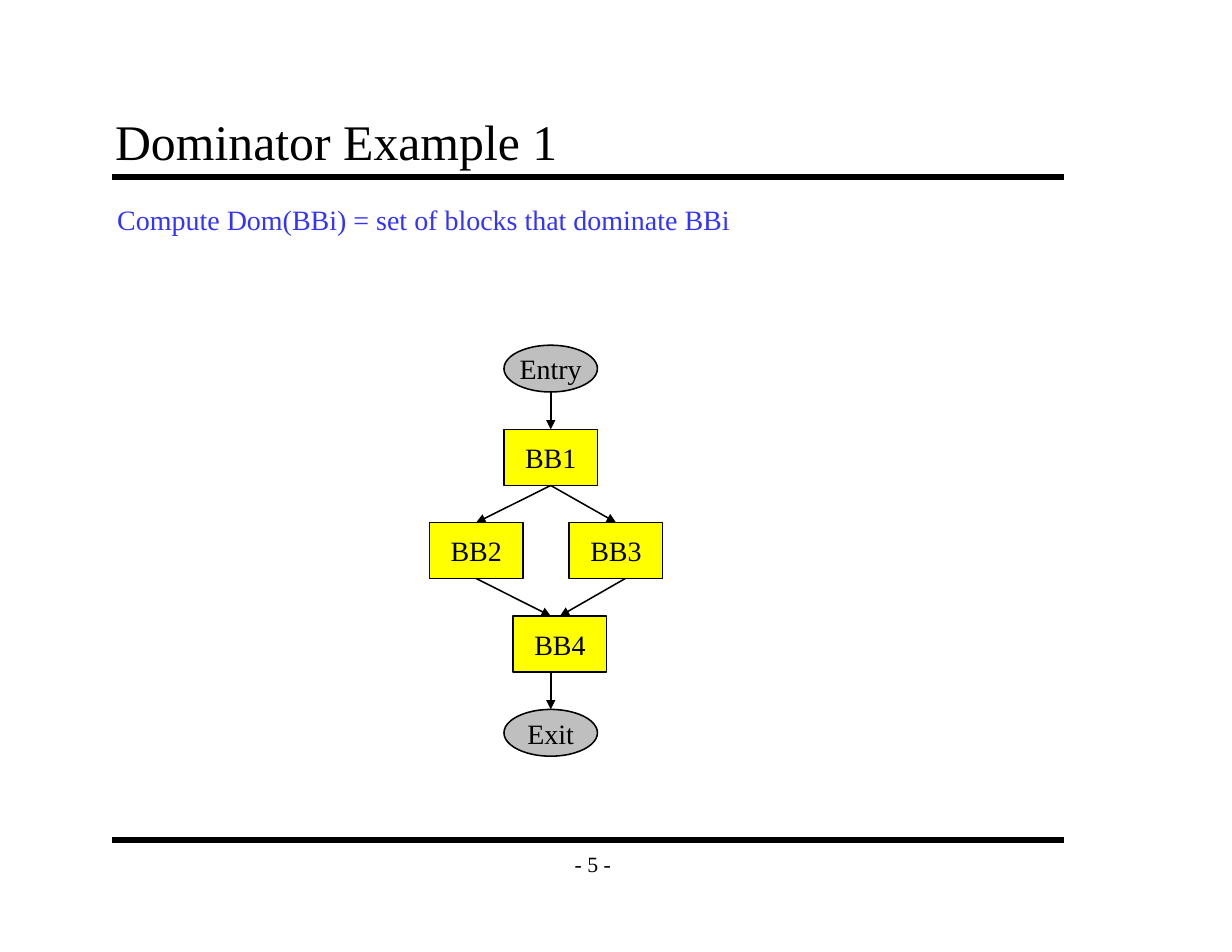
from lxml.etree import SubElement
from pptx import Presentation
from pptx.dml.color import RGBColor
from pptx.enum.shapes import MSO_CONNECTOR, MSO_SHAPE
from pptx.enum.text import MSO_ANCHOR, PP_ALIGN
from pptx.oxml.ns import qn
from pptx.util import Cm, Pt

FONT = "Times New Roman"
BLACK, YELLOW, GRAY, BLUE = "000000", "FFFF00", "BFBFBF", "3333FF"
NODE_WIDTH, BLOCK_HEIGHT, OVAL_HEIGHT = 2.12, 1.27, 1.06
TOP, BOTTOM = 0, 2
AXIS = 12.49


def color(hex_string):
    return RGBColor.from_string(hex_string)


def write(shape, text, size, ink=BLACK, align=PP_ALIGN.LEFT,
          anchor=MSO_ANCHOR.MIDDLE, wrap=False, insets=(0.25, 0.13)):
    frame = shape.text_frame
    frame.text = text
    frame.word_wrap = wrap
    frame.vertical_anchor = anchor
    frame.margin_left = frame.margin_right = Cm(insets[0])
    frame.margin_top = frame.margin_bottom = Cm(insets[1])
    paragraph = frame.paragraphs[0]
    paragraph.alignment = align
    font = paragraph.runs[0].font
    font.name, font.size = FONT, Pt(size)
    font.color.rgb = color(ink)


def add_label(slide, box, text, size, **style):
    label = slide.shapes.add_textbox(*map(Cm, box))
    write(label, text, size, **style)


def add_node(slide, text, kind, center, top, height, fill):
    node = slide.shapes.add_shape(kind, Cm(center - NODE_WIDTH / 2), Cm(top),
                                  Cm(NODE_WIDTH), Cm(height))
    node.shadow.inherit = False
    node.fill.solid()
    node.fill.fore_color.rgb = color(fill)
    node.line.color.rgb = color(BLACK)
    node.line.width = Pt(1)
    write(node, text, 18, align=PP_ALIGN.CENTER)
    return node


def add_block(slide, text, center, top):
    return add_node(slide, text, MSO_SHAPE.RECTANGLE, center, top,
                    BLOCK_HEIGHT, YELLOW)


def add_terminal(slide, text, top):
    return add_node(slide, text, MSO_SHAPE.OVAL, AXIS, top, OVAL_HEIGHT, GRAY)


def add_line(slide, start, end, width):
    line = slide.shapes.add_connector(MSO_CONNECTOR.STRAIGHT,
                                      *map(Cm, (*start, *end)))
    line.line.color.rgb = color(BLACK)
    line.line.width = Pt(width)
    SubElement(line._element.spPr, qn("a:effectLst"))
    return line


def add_edge(slide, start, end, source=None, target=None):
    edge = add_line(slide, start, end, 1)
    SubElement(edge.line._get_or_add_ln(), qn("a:tailEnd"), type="triangle")
    if source is not None:
        edge.begin_connect(source, BOTTOM)
    if target is not None:
        edge.end_connect(target, TOP)


def main():
    deck = Presentation()
    deck.slide_width, deck.slide_height = Cm(27.94), Cm(21.59)
    slide = deck.slides.add_slide(deck.slide_layouts[6])

    for rule_y in (4.02, 19.05):
        add_line(slide, (2.54, rule_y), (24.13, rule_y), 4)
    add_label(slide, (12.49, 19.05, 1.91, 1.06), "- 5 -", 14,
              align=PP_ALIGN.CENTER, insets=(0.28, 0.15))
    add_label(slide, (2.33, 2.33, 21.59, 1.69), "Dominator Example 1", 32,
              anchor=MSO_ANCHOR.BOTTOM, wrap=True, insets=(0.28, 0.15))
    add_label(slide, (2.41, 4.47, 14.55, 1.02),
              "Compute Dom(BBi) = set of blocks that dominate BBi", 18,
              ink=BLUE, anchor=MSO_ANCHOR.TOP)

    left, right, merge = 10.8, 13.97, 12.7
    entry_y, first_y, branch_y, merge_y, exit_y = 7.83, 9.74, 11.85, 13.97, 16.09
    first_end, branch_end, merge_end = (
        y + BLOCK_HEIGHT for y in (first_y, branch_y, merge_y))

    add_terminal(slide, "Entry", entry_y)
    bb1 = add_block(slide, "BB1", AXIS, first_y)
    bb2 = add_block(slide, "BB2", left, branch_y)
    bb3 = add_block(slide, "BB3", right, branch_y)
    bb4 = add_block(slide, "BB4", merge, merge_y)
    exit_node = add_terminal(slide, "Exit", exit_y)

    add_edge(slide, (AXIS, entry_y + OVAL_HEIGHT), (AXIS, first_y), target=bb1)
    add_edge(slide, (AXIS, first_end), (left, branch_y), bb1, bb2)
    add_edge(slide, (AXIS, first_end), (right, branch_y), bb1, bb3)
    add_edge(slide, (left, branch_end), (AXIS, merge_y), source=bb2)
    add_edge(slide, (14.18, branch_end), (merge, merge_y), target=bb4)
    add_edge(slide, (AXIS, merge_end), (AXIS, exit_y), target=exit_node)

    deck.save("out.pptx")


if __name__ == "__main__":
    main()
